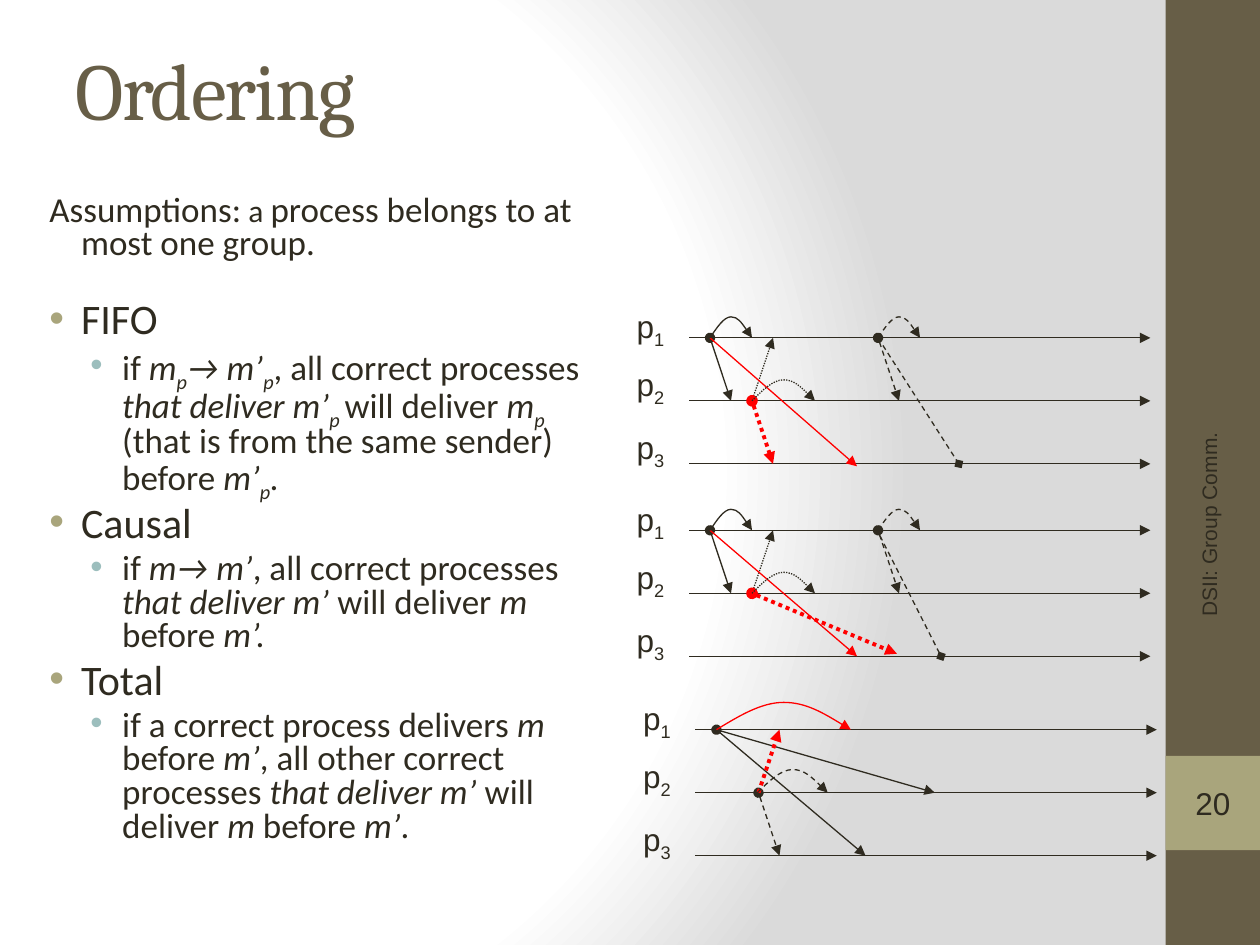
from lxml.etree import SubElement
from pptx import Presentation
from pptx.dml.color import RGBColor
from pptx.enum.dml import MSO_LINE
from pptx.enum.shapes import MSO_CONNECTOR, MSO_SHAPE
from pptx.enum.text import MSO_ANCHOR, MSO_AUTO_SIZE, PP_ALIGN
from pptx.oxml import parse_xml
from pptx.oxml.ns import nsdecls, qn
from pptx.util import Cm, Pt

INK, OLIVE, SAGE, TEAL, RED = "2F2B20", "675E47", "A9A57C", "9CBEBD", "FF0000"
ROW = 1.27
TICK = ROW / 3
AXIS_LENGTH = 9.3

STYLES = {
    "solid": (INK, 0.75, None),
    "dash": (INK, 0.75, MSO_LINE.DASH),
    "dot": (INK, 0.75, MSO_LINE.ROUND_DOT),
    "red": (RED, 0.75, None),
    "red dot": (RED, 2.25, MSO_LINE.ROUND_DOT),
}

ASSUMPTION = [("Assumptions:", "", 20), (" a ", "", 18),
              ("process belongs to at most one group.", "", 20)]
DEFINITIONS = [
    ("FIFO", [("if ", ""), ("m", "i"), ("p", "is"), ("→ m’", "i"), ("p", "is"),
              (", all correct processes ", ""), ("that deliver m’", "i"), ("p ", "is"),
              ("will deliver ", ""), ("m", "i"), ("p", "is"),
              (" (that is from the same sender) before ", ""),
              ("m’", "i"), ("p", "is"), (".", "i")]),
    ("Causal", [("if ", ""), ("m→ m’", "i"), (", all correct processes ", ""),
                ("that deliver m’ ", "i"), ("will deliver ", ""), ("m", "i"),
                (" before ", ""), ("m’.", "i")]),
    ("Total", [("if a correct process delivers ", ""), ("m", "i"), (" before ", ""),
               ("m’", "i"), (", all other correct processes ", ""),
               ("that deliver m’", "i"), (" will deliver ", ""), ("m", "i"),
               (" before ", ""), ("m’", "i"), (".", "")]),
]

SHARED_MESSAGES = [
    ((1, 0), (2, 1), "solid", "oval", "triangle"),
    ((3, 1), (4, 0), "dot", None, "triangle"),
    ((9, 0), (10, 1), "dash", "oval", "triangle"),
]
SHARED_ARCS = [(1, 3, 0, 1, "solid"), (9, 11, 0, 1, "dash"), (3, 6, 1, 1, "dot")]
FIFO_MESSAGES = SHARED_MESSAGES + [
    ((3, 1), (4, 2), "red dot", "oval", "triangle"),
    ((1, 0), (8, 2.04), "red", None, "triangle"),
    ((9, 0), (12.85, 2), "dash", None, "diamond"),
]
CAUSAL_MESSAGES = SHARED_MESSAGES + [
    ((3, 1), (9.9, 1.96), "red dot", "oval", "triangle"),
    ((1, 0), (8, 2), "red", None, "triangle"),
    ((8.9, -0.04), (12, 2), "dash", None, "diamond"),
]
TOTAL_MESSAGES = [
    ((1, 0), (11.4, 1), "solid", "oval", "triangle"),
    ((3, 1), (4, 2), "dash", "oval", "triangle"),
    ((1, 0), (8.1, 2), "solid", None, "triangle"),
    ((3, 1), (4, 0), "red dot", None, "triangle"),
]
TOTAL_ARCS = [(1, 7.4, 0, 1.3, "red"), (2.95, 6.3, 1, 1.1, "dash")]


def color(value):
    """Return the colour of a hex string."""
    return RGBColor.from_string(value)


def place(shape, left, top, width, height):
    """Move and size a shape, in centimetres."""
    shape.left, shape.top, shape.width, shape.height = map(Cm, (left, top, width, height))


def add_run(paragraph, text, size, font="Arial", ink=INK, style=""):
    """Add a run; style may hold i for italic and s for subscript."""
    run = paragraph.add_run()
    run.text = text
    run.font.size, run.font.name = Pt(size), font
    run.font.color.rgb = color(ink)
    run.font.italic = "i" in style
    if "s" in style:
        run.font._element.set("baseline", "-25000")
    return run


def style_line(shape, style, head=None, tail=None):
    """Give a connector or curve its stroke and arrowheads, without shadow."""
    ink, width, dash = STYLES[style]
    shape.line.color.rgb = color(ink)
    shape.line.width = Pt(width)
    if dash:
        shape.line.dash_style = dash
    properties = shape._element.spPr
    for tag, kind in (("a:headEnd", head), ("a:tailEnd", tail)):
        if kind:
            SubElement(properties.find(qn("a:ln")), qn(tag), type=kind)
    SubElement(properties, qn("a:effectLst"))


def add_message(shapes, start, end, style, head=None, tail="triangle"):
    """Draw a straight arrow between two points in centimetres."""
    connector = shapes.add_connector(MSO_CONNECTOR.STRAIGHT, *map(Cm, start + end))
    style_line(connector, style, head, tail)


def add_arc(shapes, left, base, width, height, style):
    """Draw a curved arrow that rises from a time axis and returns to it."""
    rises = (0, 0.5, 1, 1, 1, 0.5, 0)
    points = [(Cm(left + width * step / 6), Cm(base - height * rise))
              for step, rise in enumerate(rises)]
    builder = shapes.build_freeform(*points[0])
    builder.add_line_segments(points[1:], close=False)
    arc = builder.convert_to_shape()
    outline = next(arc._element.iter(qn("a:moveTo"))).getparent()
    segments = outline.findall(qn("a:lnTo"))
    for first in (0, 3):
        curve = SubElement(outline, qn("a:cubicBezTo"))
        for segment in segments[first:first + 3]:
            curve.append(segment[0])
            outline.remove(segment)
    arc.fill.background()
    style_line(arc, style, tail="triangle")


def add_diagram(slide, left, top, messages, arcs):
    """Draw the three process time lines with the messages between them."""
    shapes = slide.shapes.add_group_shape().shapes

    def point(tick, row):
        """Turn a tick and a row into centimetres on the slide."""
        return left + tick * TICK, top + row * ROW

    for row, rise in enumerate((0.74, 0.84, 0.84)):
        y = top + row * ROW
        add_message(shapes, (left, y), (left + AXIS_LENGTH, y), "solid")
        label = shapes.add_textbox(Cm(left - 1.32), Cm(y - rise), Cm(1.09), Cm(1.02))
        label.text_frame.word_wrap = False
        label.text_frame.auto_size = MSO_AUTO_SIZE.SHAPE_TO_FIT_TEXT
        paragraph = label.text_frame.paragraphs[0]
        paragraph.alignment = PP_ALIGN.CENTER
        add_run(paragraph, "p", 18)
        add_run(paragraph, str(row + 1), 18, style="s")
    for start, end, style, head, tail in messages:
        add_message(shapes, point(*start), point(*end), style, head, tail)
    for first, last, row, height, style in arcs:
        add_arc(shapes, *point(first, row), (last - first) * TICK, height * TICK, style)


def format_paragraph(paragraph, level, size, bullet=None):
    """Set the spacing, indent and bullet of a body paragraph."""
    paragraph.level = level
    paragraph.line_spacing = 0.8
    paragraph.space_before = Pt(size * 0.2)
    properties = paragraph._p.get_or_add_pPr()
    properties.set("marL", str(Cm((0.95, 1.78)[level])))
    properties.set("indent", str(Cm(-0.64)))
    if bullet:
        SubElement(SubElement(properties, qn("a:buClr")), qn("a:srgbClr"), val=bullet)
        SubElement(properties, qn("a:buFont"), typeface="Arial")
        SubElement(properties, qn("a:buChar"), char="•")
    else:
        SubElement(properties, qn("a:buNone"))


def fill_title(title, left, top, width, height):
    """Write the slide title."""
    place(title, left, top, width, height)
    title.text_frame.vertical_anchor = MSO_ANCHOR.MIDDLE
    title.text_frame.auto_size = MSO_AUTO_SIZE.NONE
    paragraph = title.text_frame.paragraphs[0]
    paragraph.alignment = PP_ALIGN.LEFT
    run = add_run(paragraph, "Ordering", 46, "Cambria", OLIVE)
    run.font._element.set("spc", "-100")


def fill_body(body, left, top, width, height):
    """Write the assumption and the three ordering definitions."""
    place(body, left, top, width, height)
    frame = body.text_frame
    frame.auto_size = MSO_AUTO_SIZE.NONE
    paragraph = frame.paragraphs[0]
    paragraph.space_after = Pt(18)
    format_paragraph(paragraph, 0, 20)
    for text, style, size in ASSUMPTION:
        add_run(paragraph, text, size, "Calibri", style=style)
    for name, definition in DEFINITIONS:
        paragraph = frame.add_paragraph()
        format_paragraph(paragraph, 0, 24, SAGE)
        add_run(paragraph, name, 24, "Calibri")
        paragraph = frame.add_paragraph()
        format_paragraph(paragraph, 1, 20, TEAL)
        for text, style in definition:
            add_run(paragraph, text, 20, "Calibri", style=style)


def add_sidebar(slide, left, top, width, height):
    """Draw the side band with the footer text and the page number."""
    number_top = top + height * 0.8
    for y, extent, fill in ((top, height, OLIVE), (number_top, width, SAGE)):
        band = slide.shapes.add_shape(MSO_SHAPE.RECTANGLE, Cm(left), Cm(y), Cm(width), Cm(extent))
        band.shadow.inherit = False
        band.fill.solid()
        band.fill.fore_color.rgb = color(fill)
        band.line.fill.background()
    frame = band.text_frame
    frame.vertical_anchor = MSO_ANCHOR.MIDDLE
    frame.margin_left = frame.margin_right = 0
    frame.paragraphs[0].alignment = PP_ALIGN.CENTER
    add_run(frame.paragraphs[0], "20", 18)

    footer = slide.shapes.add_textbox(Cm(left - 2.42), Cm(top + 11.25), Cm(6.58), Cm(1.02))
    footer.rotation = 270
    footer.text_frame.word_wrap = True
    footer.text_frame.vertical_anchor = MSO_ANCHOR.MIDDLE
    footer.text_frame.paragraphs[0].alignment = PP_ALIGN.RIGHT
    add_run(footer.text_frame.paragraphs[0], "DSII: Group Comm.", 12)


def paint_background(slide):
    """Fill the slide with a circular gradient from white to grey."""
    slide.background.fill.solid()
    solid = next(slide._element.iter(qn("p:bgPr")))[0]
    stops = "".join(f'<a:gs pos="{position}000"><a:srgbClr val="{value}"/></a:gs>'
                    for position, value in ((0, "FFFFFF"), (75, "FFFFFF"), (100, "DADADA")))
    solid.getparent().replace(solid, parse_xml(
        f'<a:gradFill {nsdecls("a")} rotWithShape="1"><a:gsLst>{stops}</a:gsLst>'
        '<a:path path="circle"><a:fillToRect l="20000" t="50000" r="100000" b="50000"/>'
        '</a:path></a:gradFill>'))


def main():
    """Build the slide and save it."""
    presentation = Presentation()
    presentation.slide_width, presentation.slide_height = Cm(25.4), Cm(19.05)
    slide = presentation.slides.add_slide(presentation.slide_layouts[1])
    paint_background(slide)
    add_sidebar(slide, 23.5, 0, 1.9, 19.05)
    fill_title(slide.shapes.title, 1.27, 0.2, 22.86, 3.18)
    fill_body(slide.placeholders[1], 0.43, 3.81, 12.07, 13.97)
    add_diagram(slide, 13.89, 6.81, FIFO_MESSAGES, SHARED_ARCS)
    add_diagram(slide, 13.89, 10.69, CAUSAL_MESSAGES, SHARED_ARCS)
    add_diagram(slide, 14.02, 14.71, TOTAL_MESSAGES, TOTAL_ARCS)
    presentation.save("out.pptx")


if __name__ == "__main__":
    main()
